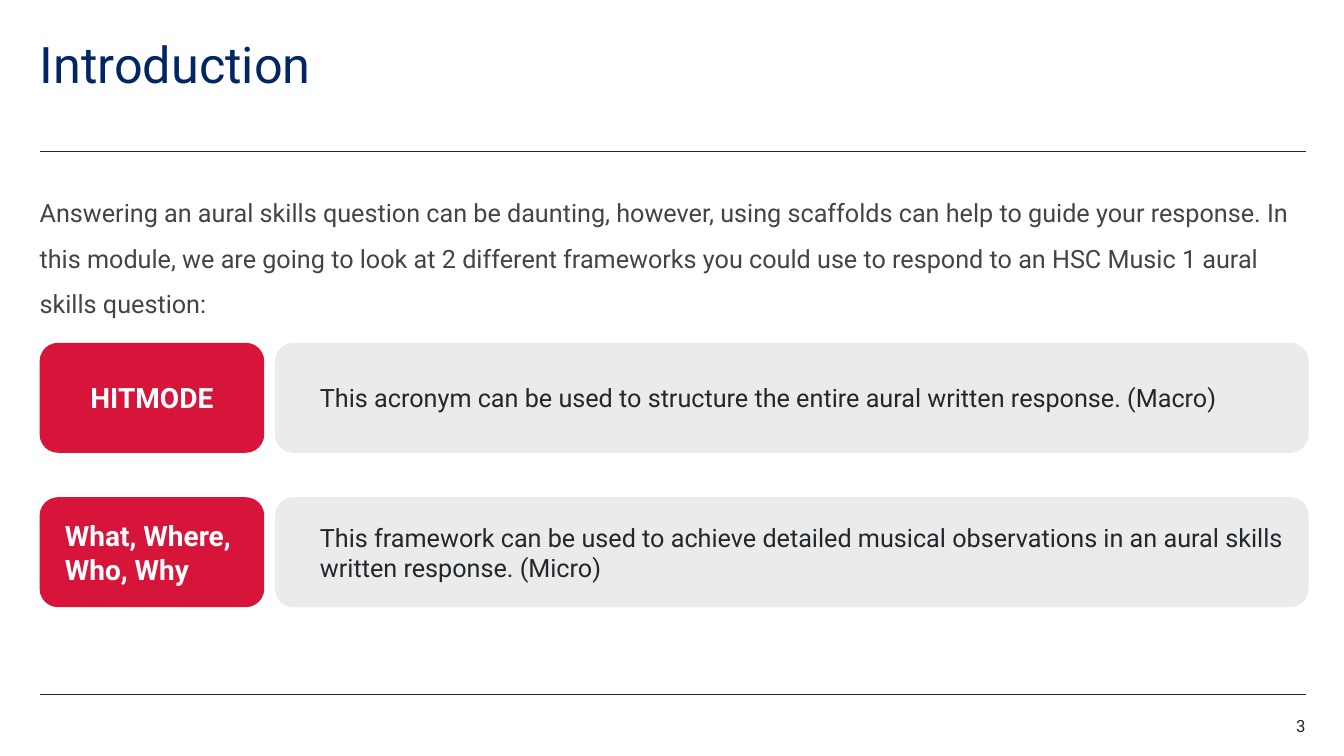
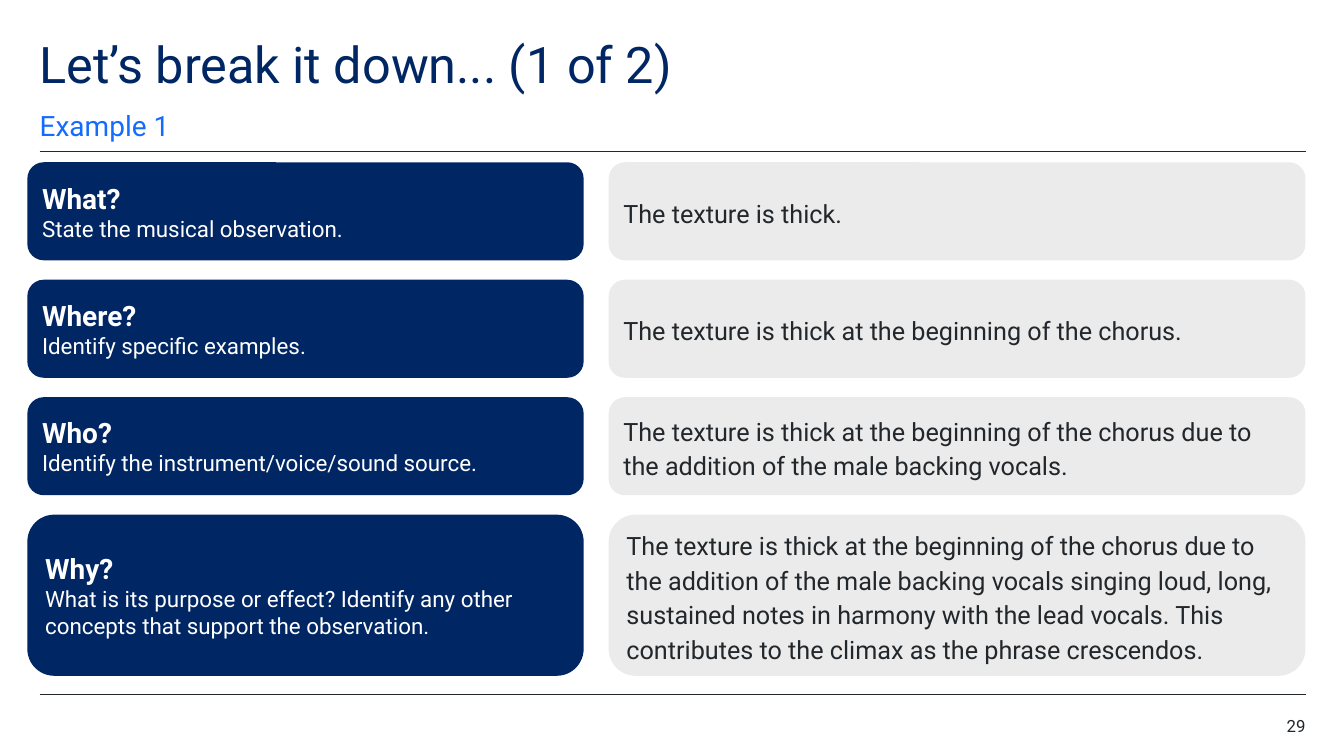
from collections import namedtuple
from dataclasses import dataclass

from lxml import etree
from pptx import Presentation
from pptx.dml.color import RGBColor
from pptx.enum.shapes import MSO_CONNECTOR, MSO_SHAPE
from pptx.enum.text import MSO_ANCHOR, PP_ALIGN
from pptx.oxml.ns import qn
from pptx.util import Cm, Pt

STRAIGHT = MSO_CONNECTOR.STRAIGHT
ROUNDED = MSO_SHAPE.ROUNDED_RECTANGLE
TOP, MIDDLE, BOTTOM = MSO_ANCHOR.TOP, MSO_ANCHOR.MIDDLE, MSO_ANCHOR.BOTTOM
LEFT, CENTER, RIGHT = PP_ALIGN.LEFT, PP_ALIGN.CENTER, PP_ALIGN.RIGHT

# All box measurements are in centimetres.
Box = namedtuple("Box", "left top width height")


@dataclass(frozen=True)
class Theme:
    font: str = "Roboto"
    navy: str = "002664"
    blue: str = "146CFD"
    red: str = "D7153A"
    pale: str = "EBEBEB"
    ink: str = "22272B"
    grey: str = "444444"
    white: str = "FFFFFF"
    title_size: int = 36
    heading_size: int = 20
    body_size: int = 18
    hint_size: int = 16
    footer_size: int = 12
    rule_width: float = 0.5
    inset: float = 0.25


THEME = Theme()

SLIDE_WIDTH, SLIDE_HEIGHT = 33.87, 19.05
MARGIN = 1.0
CONTENT_WIDTH = 31.9
RULE_TOPS = (3.81, 17.5)
TITLE_BOX = Box(MARGIN, 1.0, 28.0, 1.52)
SUBTITLE_BOX = Box(MARGIN, 2.72, 28.0, 0.86)
PAGE_NUMBER_BOX = Box(30.9, 18.1, 2.0, 0.5)

INTRODUCTION = (
    "Answering an aural skills question can be daunting, however, using scaffolds "
    "can help to guide your response. In this module, we are going to look at 2 "
    "different frameworks you could use to respond to an HSC Music 1 aural skills "
    "question:"
)

# Name, description, alignment of the name, left inset of the name
FRAMEWORKS = (
    ("HITMODE",
     "This acronym can be used to structure the entire aural written response. (Macro)",
     CENTER, THEME.inset),
    ("What, Where, Who, Why",
     "This framework can be used to achieve detailed musical observations in an "
     "aural skills written response. (Micro)",
     LEFT, 0.5),
)

# Question, hint, answer, row height
BREAKDOWN = (
    ("What?", "State the musical observation.",
     "The texture is thick.", 2.47),
    ("Where?", "Identify specific examples.",
     "The texture is thick at the beginning of the chorus.", 2.47),
    ("Who?", "Identify the instrument/voice/sound source.",
     "The texture is thick at the beginning of the chorus due to the addition of "
     "the male backing vocals.", 2.47),
    ("Why?",
     "What is its purpose or effect? Identify any other concepts that support "
     "the observation.",
     "The texture is thick at the beginning of the chorus due to the addition of "
     "the male backing vocals singing loud, long, sustained notes in harmony with "
     "the lead vocals. This contributes to the climax as the phrase crescendos.",
     4.06),
)


def rgb(colour):
    return RGBColor.from_string(colour)


def place(box):
    return [Cm(length) for length in box]


def write(frame, text, *, size, colour, bold=False, align=LEFT, spacing=1.0):
    """Fill an empty frame, or append a paragraph to one already filled."""
    paragraph = frame.add_paragraph() if frame.text else frame.paragraphs[0]
    paragraph.alignment = align
    paragraph.line_spacing = spacing
    run = paragraph.add_run()
    run.text = text
    run.font.name = THEME.font
    run.font.size = Pt(size)
    run.font.bold = bold
    run.font.color.rgb = rgb(colour)


def add_label(slide, box, text, anchor=TOP, **text_format):
    """Add text whose edges coincide with the box."""
    frame = slide.shapes.add_textbox(*place(box)).text_frame
    frame.word_wrap = True
    frame.vertical_anchor = anchor
    frame.margin_left = frame.margin_right = 0
    frame.margin_top = frame.margin_bottom = 0
    write(frame, text, **text_format)


def add_card(slide, box, fill, left_inset=THEME.inset):
    """Add a rounded card and return its text frame."""
    card = slide.shapes.add_shape(ROUNDED, *place(box))
    card.shadow.inherit = False
    card.fill.solid()
    card.fill.fore_color.rgb = rgb(fill)
    card.line.fill.background()
    frame = card.text_frame
    frame.word_wrap = True
    frame.vertical_anchor = MIDDLE
    frame.margin_left = Cm(left_inset)
    return frame


def add_rule(slide, top):
    rule = slide.shapes.add_connector(
        STRAIGHT, Cm(MARGIN), Cm(top), Cm(MARGIN + CONTENT_WIDTH), Cm(top))
    rule.line.color.rgb = rgb(THEME.ink)
    rule.line.width = Pt(THEME.rule_width)
    etree.SubElement(rule._element.spPr, qn("a:effectLst"))


def add_base_slide(deck, title, page_number):
    """Add a slide with the shared title, rules and page number."""
    slide = deck.slides.add_slide(deck.slide_layouts[6])
    for top in RULE_TOPS:
        add_rule(slide, top)
    add_label(slide, TITLE_BOX, title, size=THEME.title_size,
              colour=THEME.navy, spacing=0.9)
    add_label(slide, PAGE_NUMBER_BOX, str(page_number), size=THEME.footer_size,
              colour=THEME.ink, align=RIGHT, spacing=0.9)
    return slide


def add_framework_row(slide, box, name, description, align, name_inset):
    name_width, gap, description_inset = 5.66, 0.27, 1.0
    name_box = box._replace(width=name_width)
    offset = name_width + gap
    description_box = box._replace(left=box.left + offset, width=box.width - offset)
    write(add_card(slide, name_box, THEME.red, name_inset), name,
          size=THEME.heading_size, colour=THEME.white, bold=True, align=align)
    write(add_card(slide, description_box, THEME.pale, description_inset),
          description, size=THEME.body_size, colour=THEME.ink)


def add_breakdown_row(slide, box, question, hint, answer):
    question_width, gap = 14.02, 0.63
    offset = question_width + gap
    question_frame = add_card(slide, box._replace(width=question_width), THEME.navy)
    write(question_frame, question, size=THEME.heading_size,
          colour=THEME.white, bold=True)
    write(question_frame, hint, size=THEME.hint_size, colour=THEME.white)
    answer_box = box._replace(left=box.left + offset, width=box.width - offset)
    write(add_card(slide, answer_box, THEME.pale), answer,
          size=THEME.body_size, colour=THEME.ink, spacing=1.14)


def build_introduction(deck):
    slide = add_base_slide(deck, "Introduction", 3)
    add_label(slide, Box(MARGIN, 4.6, CONTENT_WIDTH, 3.48), INTRODUCTION,
              size=THEME.body_size, colour=THEME.grey, spacing=1.5)
    first_row = Box(MARGIN, 8.64, CONTENT_WIDTH + 0.08, 2.77)
    row_pitch = 3.89
    for index, framework in enumerate(FRAMEWORKS):
        row = first_row._replace(top=first_row.top + index * row_pitch)
        add_framework_row(slide, row, *framework)


def build_breakdown(deck):
    slide = add_base_slide(deck, "Let’s break it down... (1 of 2)", 29)
    add_label(slide, SUBTITLE_BOX, "Example 1", anchor=BOTTOM,
              size=THEME.heading_size, colour=THEME.blue, spacing=1.5)
    left, top, gap = 0.69, 4.09, 0.49
    width = MARGIN + CONTENT_WIDTH - left
    for question, hint, answer, height in BREAKDOWN:
        add_breakdown_row(slide, Box(left, top, width, height),
                          question, hint, answer)
        top += height + gap


def main():
    deck = Presentation()
    deck.slide_width = Cm(SLIDE_WIDTH)
    deck.slide_height = Cm(SLIDE_HEIGHT)
    build_introduction(deck)
    build_breakdown(deck)
    deck.save("out.pptx")


if __name__ == "__main__":
    main()
